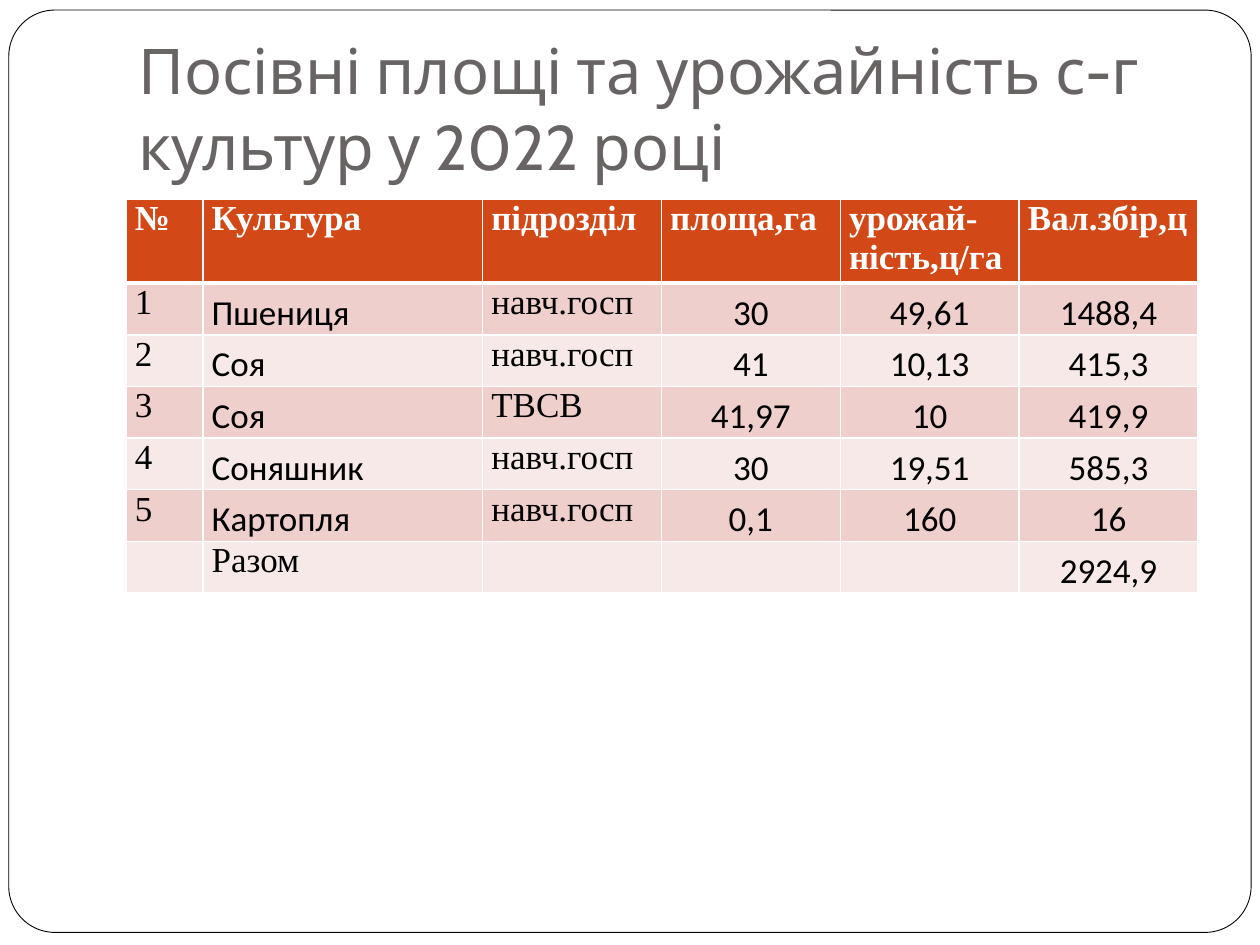
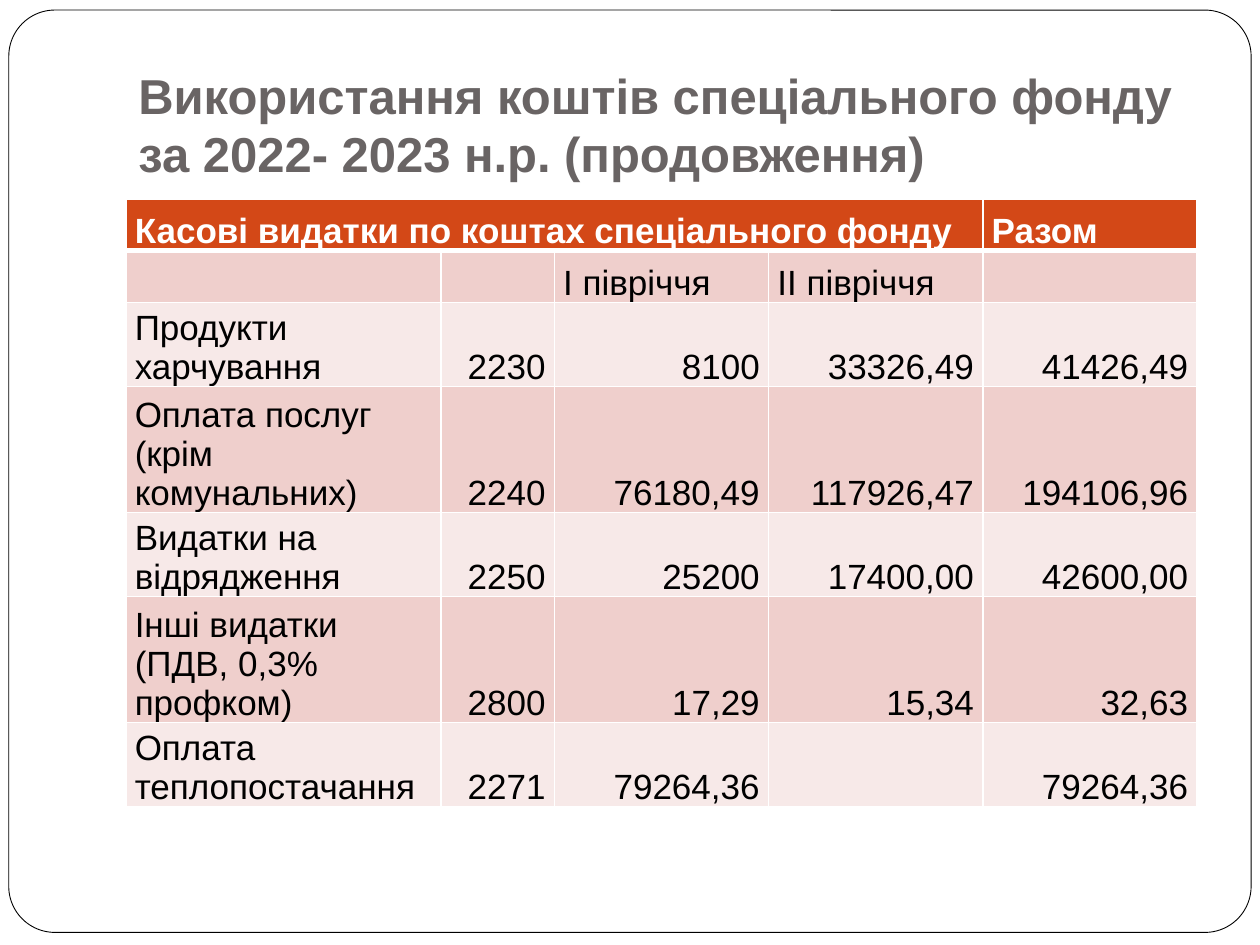
from typing import NamedTuple
from lxml.etree import SubElement
from pptx import Presentation
from pptx.dml.color import RGBColor
from pptx.enum.shapes import MSO_SHAPE
from pptx.enum.text import MSO_ANCHOR, PP_ALIGN
from pptx.oxml.ns import qn
from pptx.util import Inches, Pt

WHITE, BLACK, GREY = "FFFFFF", "000000", "696464"
HEADER, BANDS = "D34817", ("EFCFCC", "F7E9E8")
LEFT, ROW_HEIGHT = 1, 0.41


class CellStyle(NamedTuple):
    font: str
    anchor: MSO_ANCHOR = MSO_ANCHOR.BOTTOM
    align: PP_ALIGN = PP_ALIGN.LEFT


SERIF = CellStyle("Times New Roman", MSO_ANCHOR.TOP)
NAME = CellStyle("Calibri")
NUMBER = CellStyle("Calibri", align=PP_ALIGN.CENTER)
SANS = CellStyle("Arial")
AMOUNT = CellStyle("Arial", align=PP_ALIGN.RIGHT)

CROP_COLUMNS = [0.61, 2.22] + [1.42] * 4
CROP_STYLES = [SERIF, NAME, SERIF] + [NUMBER] * 3
CROPS = [
    ("№", "Культура", "підрозділ", "площа,га", "урожай-ність,ц/га", "Вал.збір,ц"),
    ("1", "Пшениця", "навч.госп", "30", "49,61", "1488,4"),
    ("2", "Соя", "навч.госп", "41", "10,13", "415,3"),
    ("3", "Соя", "ТВСВ", "41,97", "10", "419,9"),
    ("4", "Соняшник", "навч.госп", "30", "19,51", "585,3"),
    ("5", "Картопля", "навч.госп", "0,1", "160", "16"),
    ("", "Разом", "", "", "", "2924,9"),
]

EXPENSE_COLUMNS = [2.5, 0.9] + [1.7] * 3
EXPENSE_STYLES = [SANS] + [AMOUNT] * 4
EXPENSES = [
    ("Касові видатки по коштах спеціального фонду", "", "", "", "Разом"),
    ("", "", "І півріччя", "ІІ півріччя", ""),
    ("Продукти харчування", "2230", "8100", "33326,49", "41426,49"),
    ("Оплата послуг (крім комунальних)", "2240", "76180,49", "117926,47", "194106,96"),
    ("Видатки на відрядження", "2250", "25200", "17400,00", "42600,00"),
    ("Інші видатки (ПДВ, 0,3% профком)", "2800", "17,29", "15,34", "32,63"),
    ("Оплата теплопостачання", "2271", "79264,36", "", "79264,36"),
]


def rgb(color):
    return RGBColor.from_string(color)


def set_font(p, name, size, color, bold):
    p.font.name, p.font.size, p.font.bold = name, Pt(size), bold
    p.font.color.rgb = rgb(color)


def add_frame(s):
    sp = s.shapes.add_shape(MSO_SHAPE.ROUNDED_RECTANGLE, Inches(0.07), Inches(0.08),
                            Inches(9.86), Inches(7.32))
    sp.adjustments[0] = 0.05
    sp.shadow.inherit = False
    sp.fill.solid()
    sp.fill.fore_color.rgb = rgb(WHITE)
    sp.line.color.rgb = rgb(BLACK)
    sp.line.width = Pt(0.5)


def add_title(s, text, font, size, bold):
    sp = s.shapes.add_textbox(Inches(LEFT), Inches(0.3), Inches(8.5), Inches(1.25))
    tf = sp.text_frame
    tf.word_wrap = True
    tf.vertical_anchor = MSO_ANCHOR.BOTTOM
    tf.margin_bottom = Inches(0.1)
    p = tf.paragraphs[0]
    p.text = text
    set_font(p, font, size, GREY, bold)


def add_slide(prs, title, font, size, bold=False):
    s = prs.slides.add_slide(prs.slide_layouts[6])
    add_frame(s)
    add_title(s, title, font, size, bold)
    return s


def set_borders(cell, bottom):
    tcPr = cell._tc.get_or_add_tcPr()
    for side, width in (("L", 1), ("R", 1), ("T", 1), ("B", bottom)):
        ln = SubElement(tcPr, qn(f"a:ln{side}"), w=str(Pt(width)))
        SubElement(SubElement(ln, qn("a:solidFill")), qn("a:srgbClr"), val=WHITE)


def fill_cell(cell, text, style, row):
    is_header = row == 0
    set_borders(cell, 3 if is_header else 1)
    cell.fill.solid()
    cell.fill.fore_color.rgb = rgb(HEADER if is_header else BANDS[(row - 1) % 2])
    cell.margin_left = cell.margin_right = Inches(0.07)
    cell.margin_top = cell.margin_bottom = 0
    cell.vertical_anchor = style.anchor
    p = cell.text_frame.paragraphs[0]
    p.text = text
    p.alignment = style.align
    set_font(p, style.font, 20, WHITE if is_header else BLACK, is_header)


def add_data_table(s, rows, widths, styles, special_styles):
    table = s.shapes.add_table(len(rows), len(widths), Inches(LEFT), Inches(1.58),
                               Inches(sum(widths)), Inches(ROW_HEIGHT * len(rows))).table
    for column, width in zip(table.columns, widths):
        column.width = Inches(width)
    for i, values in enumerate(rows):
        table.rows[i].height = Inches(ROW_HEIGHT)
        for j, (text, style) in enumerate(zip(values, styles)):
            fill_cell(table.cell(i, j), text, special_styles.get(i, {}).get(j, style), i)
    return table


def main():
    prs = Presentation()
    prs.slide_width, prs.slide_height = Inches(10), Inches(7.5)

    s = add_slide(prs, "Посівні площі та урожайність с-г культур у 2022 році", "Cabin", 36)
    total_row = len(CROPS) - 1
    add_data_table(s, CROPS, CROP_COLUMNS, CROP_STYLES,
                   {0: dict.fromkeys(range(6), SERIF), total_row: {1: SERIF}})

    s = add_slide(prs, "Використання коштів спеціального фонду за 2022- 2023 н.р. (продовження)",
                  "Arial", 28, bold=True)
    headings = dict.fromkeys(range(5), SANS)
    table = add_data_table(s, EXPENSES, EXPENSE_COLUMNS, EXPENSE_STYLES,
                           {0: headings, 1: headings})
    table.cell(0, 0).merge(table.cell(0, 3))

    prs.save("out.pptx")


if __name__ == "__main__":
    main()
